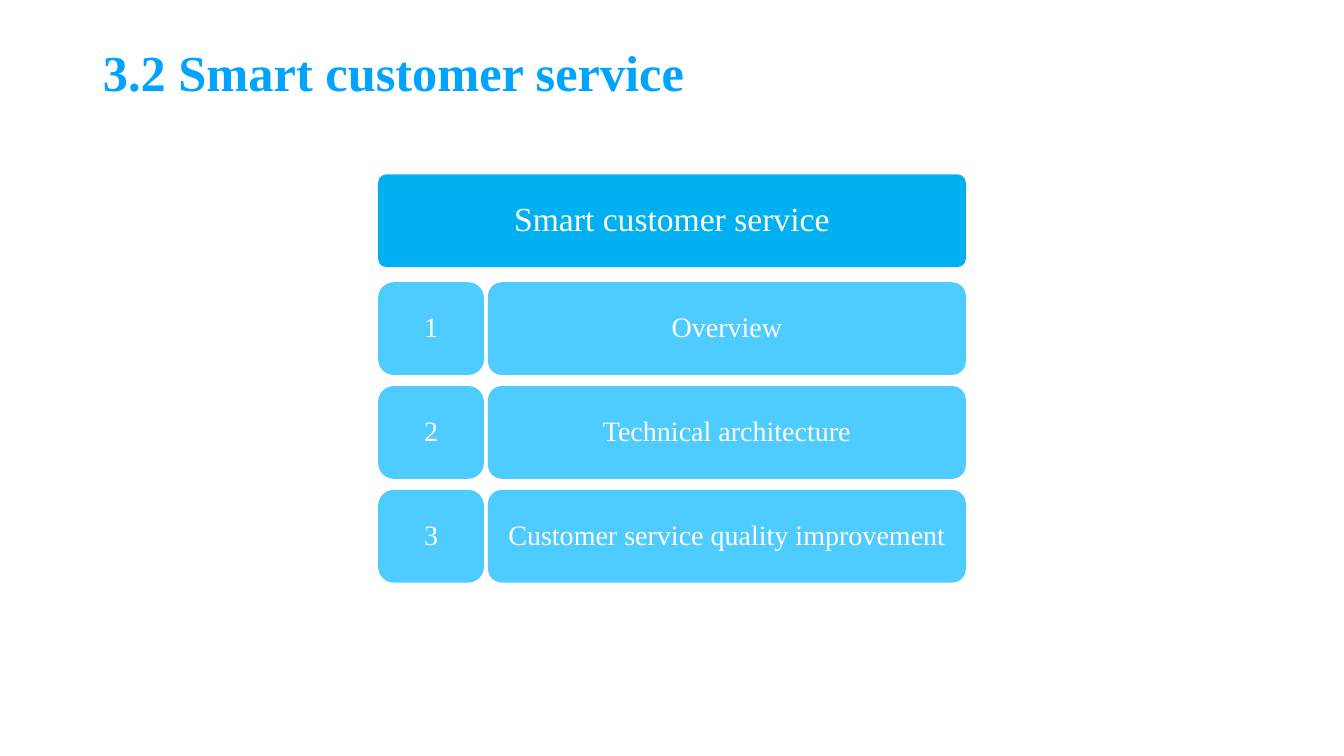
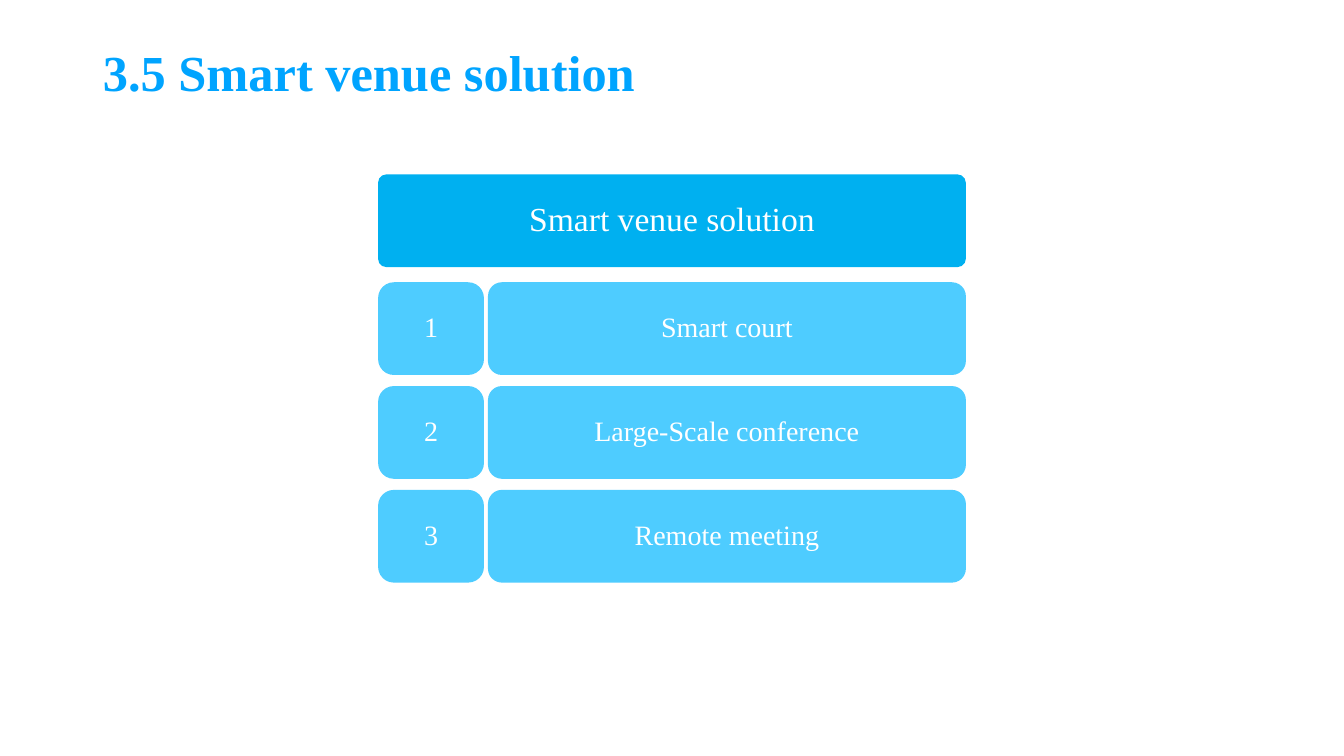
from pptx import Presentation
from pptx.dml.color import RGBColor
from pptx.enum.shapes import MSO_SHAPE
from pptx.enum.text import MSO_ANCHOR, MSO_AUTO_SIZE, PP_ALIGN
from pptx.util import Inches, Pt

SLIDES = [
    ("3.2", "Smart customer service",
     ["Overview", "Technical architecture", "Customer service quality improvement"]),
    ("3.5", "Smart venue solution",
     ["Smart court", "Large-Scale conference", "Remote meeting"]),
]
COLORS = {"title": "00A4FF", "head": "00B0F0", "row": "4ECCFF", "text": "FFFFFF"}
FONT = "Times New Roman"

LEFT, WIDE, HIGH = 3.75, 5.83, 0.92
HEAD_TOP, ROW_TOP = 1.73, 2.8
ROW_GAP, COL_GAP = 0.11, 0.04
NUM_WIDE = 1.05
BAR_LEFT = LEFT + NUM_WIDE + COL_GAP
BAR_WIDE = LEFT + WIDE - BAR_LEFT


def write(shape, text, size=20, color="text", bold=False, align=PP_ALIGN.CENTER,
          pad=(0.1, 0.05)):
    frame = shape.text_frame
    frame.word_wrap = True
    frame.auto_size = MSO_AUTO_SIZE.NONE
    frame.vertical_anchor = MSO_ANCHOR.MIDDLE
    frame.margin_left = frame.margin_right = Inches(pad[0])
    frame.margin_top = frame.margin_bottom = Inches(pad[1])
    frame.text = text
    para = frame.paragraphs[0]
    para.alignment = align
    para.line_spacing = 0.9
    font = para.runs[0].font
    font.name, font.size, font.bold = FONT, Pt(size), bold
    font.color.rgb = RGBColor.from_string(COLORS[color])


def add_box(slide, text, left, top, width, fill="row", round=0.15,
            pad=(0.14, 0.14), **style):
    box = slide.shapes.add_shape(MSO_SHAPE.ROUNDED_RECTANGLE, Inches(left),
                                 Inches(top), Inches(width), Inches(HIGH))
    box.adjustments[0] = round
    box.shadow.inherit = False
    box.fill.solid()
    box.fill.fore_color.rgb = RGBColor.from_string(COLORS[fill])
    box.line.fill.background()
    write(box, text, pad=pad, **style)


def place_title(layout):
    title = layout.placeholders[0]
    title.left, title.top = Inches(0.92), Inches(0.25)
    title.width, title.height = Inches(10.74), Inches(0.99)


def add_slide(deck, layout, number, topic, items):
    slide = deck.slides.add_slide(layout)
    write(slide.shapes.title, f"{number} {topic}", size=36, color="title",
          bold=True, align=PP_ALIGN.LEFT)
    add_box(slide, topic, LEFT, HEAD_TOP, WIDE, fill="head", round=0.09,
            pad=(0.08, 0.06), size=24)
    for row, item in enumerate(items):
        top = ROW_TOP + row * (HIGH + ROW_GAP)
        add_box(slide, str(row + 1), LEFT, top, NUM_WIDE, round=0.17)
        add_box(slide, item, BAR_LEFT, top, BAR_WIDE)


def main():
    deck = Presentation()
    deck.slide_width, deck.slide_height = Inches(13.33), Inches(7.5)
    layout = deck.slide_layouts[5]
    place_title(layout)
    for number, topic, items in SLIDES:
        add_slide(deck, layout, number, topic, items)
    deck.save("out.pptx")


if __name__ == "__main__":
    main()
